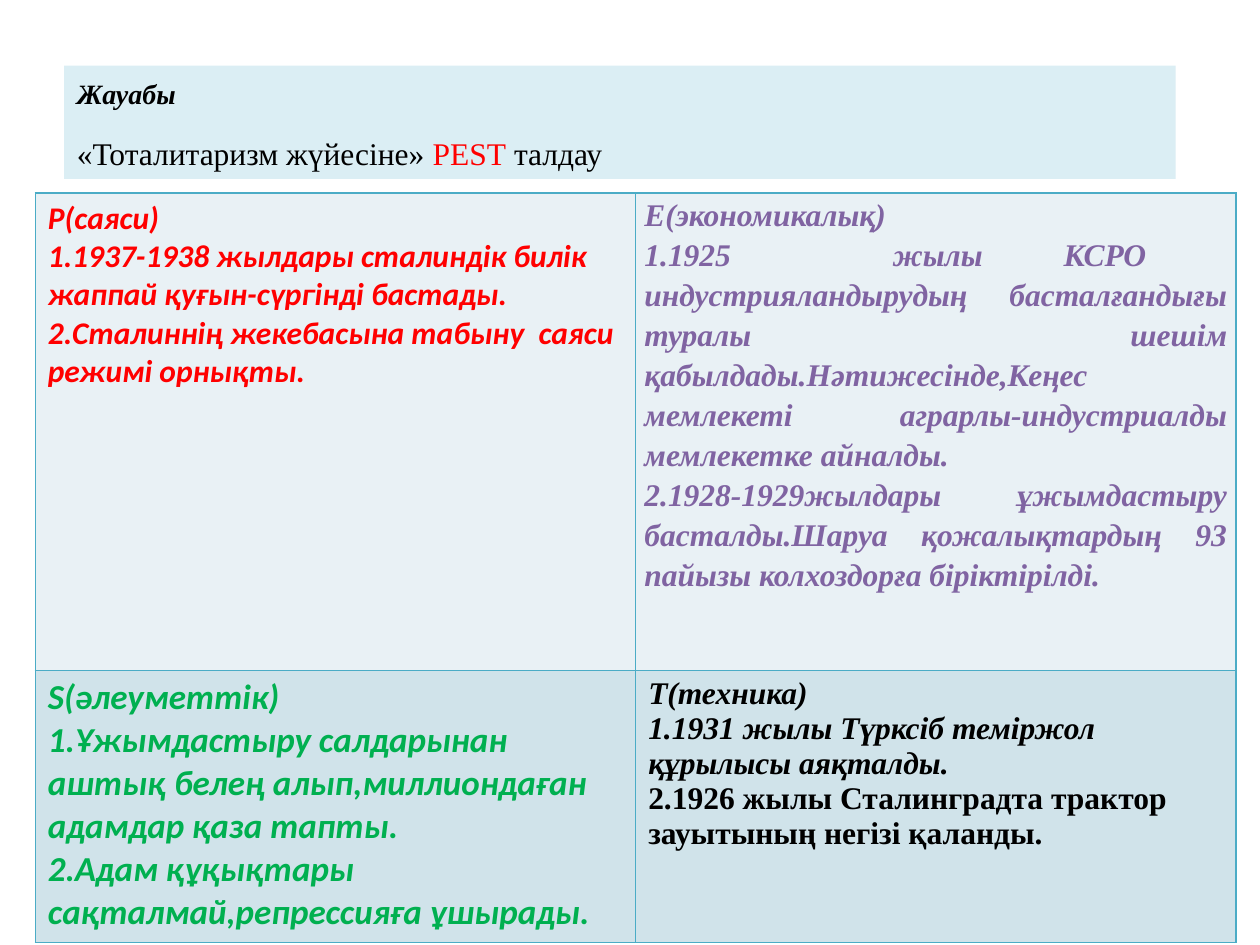
from dataclasses import dataclass

from lxml import etree
from pptx import Presentation
from pptx.dml.color import RGBColor
from pptx.enum import text
from pptx.oxml.ns import qn
from pptx.util import Inches, Pt

COLORS = {
    "header": "DBEEF4", "top_row": "E9F1F5", "bottom_row": "D0E3EA",
    "border": "4BACC6", "black": "000000", "red": "FF0000",
    "purple": "8064A2", "green": "00B050",
}
SERIF, SANS = "Times New Roman", "Calibri"


@dataclass
class Quadrant:
    row: int
    col: int
    lines: list[str]
    color: str
    font: str = SERIF
    size: int = 18
    justified: bool = False
    upright_last: bool = False


QUADRANTS = [
    Quadrant(0, 0, [
        "P(саяси)",
        "1.1937-1938 жылдары сталиндік билік жаппай қуғын-сүргінді бастады.",
        "2.Сталиннің жекебасына табыну  саяси режимі орнықты.",
    ], "red", SANS),
    Quadrant(0, 1, [
        "E(экономикалық)",
        "1.1925  жылы КСРО  индустрияландырудың басталғандығы туралы шешім "
        "қабылдады.Нәтижесінде,Кеңес мемлекеті аграрлы-индустриалды "
        "мемлекетке айналды.",
        "2.1928-1929жылдары ұжымдастыру басталды.Шаруа қожалықтардың "
        "93 пайызы колхоздорға біріктірілді.",
    ], "purple", justified=True),
    Quadrant(1, 0, [
        "S(әлеуметтік)",
        "1.Ұжымдастыру салдарынан аштық белең алып,миллиондаған адамдар "
        "қаза тапты.",
        "2.Адам құқықтары сақталмай,репрессияға ұшырады.",
    ], "green", SANS, 20),
    Quadrant(1, 1, [
        "T(техника)",
        "1.1931 жылы Түрксіб теміржол құрылысы аяқталды.",
        "2.1926 жылы Сталинградта трактор зауытының негізі қаланды.",
    ], "black", upright_last=True),
]


def rgb(name: str) -> RGBColor:
    return RGBColor.from_string(COLORS[name])


def style(font, name: str, size: int, color: str, bold: bool, italic: bool) -> None:
    font.name, font.size = name, Pt(size)
    font.bold, font.italic = bold, italic
    font.color.rgb = rgb(color)


def justify(p) -> None:
    p.alignment = text.PP_ALIGN.JUSTIFY
    p.line_spacing = 1.15


def add_borders(cell) -> None:
    tc_pr = cell._tc.get_or_add_tcPr()
    for i, side in enumerate(("lnL", "lnR", "lnT", "lnB")):
        ln = etree.Element(qn(f"a:{side}"), w=str(Pt(1)))
        fill = etree.SubElement(ln, qn("a:solidFill"))
        etree.SubElement(fill, qn("a:srgbClr"), val=COLORS["border"])
        tc_pr.insert(i, ln)  # borders come before the cell fill


def fill_quadrant(cell, q: Quadrant) -> None:
    cell.fill.solid()
    cell.fill.fore_color.rgb = rgb("bottom_row" if q.row else "top_row")
    add_borders(cell)
    if q.justified:
        cell.margin_left = cell.margin_right = Inches(0.07)
        cell.margin_top = cell.margin_bottom = 0
    tf = cell.text_frame
    tf.text = "\n".join(q.lines)
    for p in tf.paragraphs:
        style(p.font, q.font, q.size, q.color, True, True)
        if q.justified:
            justify(p)
    if q.upright_last:
        tf.paragraphs[-1].font.italic = False


def add_header(s) -> None:
    sp = s.shapes.title
    sp.left, sp.top = Inches(0.51), Inches(0.52)
    sp.width, sp.height = Inches(8.82), Inches(0.9)
    sp.fill.solid()
    sp.fill.fore_color.rgb = rgb("header")
    tf = sp.text_frame
    tf.word_wrap = True
    tf.auto_size = text.MSO_AUTO_SIZE.NONE
    tf.vertical_anchor = text.MSO_ANCHOR.TOP
    tf.text = "Жауабы"
    style(tf.paragraphs[0].font, SERIF, 16, "black", True, True)
    p = tf.add_paragraph()
    style(p.font, SERIF, 18, "black", False, False)
    for words in ("«Тоталитаризм жүйесіне» ", "PEST", " талдау "):
        r = p.add_run()
        r.text = words
        if words == "PEST":
            r.font.color.rgb = rgb("red")
    for p in tf.paragraphs:
        justify(p)
        p.space_after = Pt(10)


def add_pest_table(s) -> None:
    table = s.shapes.add_table(2, 2, Inches(0.28), Inches(1.53),
                               Inches(9.53), Inches(5.95)).table
    table.first_row = table.horz_banding = False
    for row, height in zip(table.rows, (3.79, 2.16)):
        row.height = Inches(height)
    for q in QUADRANTS:
        fill_quadrant(table.cell(q.row, q.col), q)


def main() -> None:
    prs = Presentation()
    prs.slide_width, prs.slide_height = Inches(10), Inches(7.5)
    s = prs.slides.add_slide(prs.slide_layouts[5])  # title only
    add_header(s)
    add_pest_table(s)
    prs.save("out.pptx")


if __name__ == "__main__":
    main()
